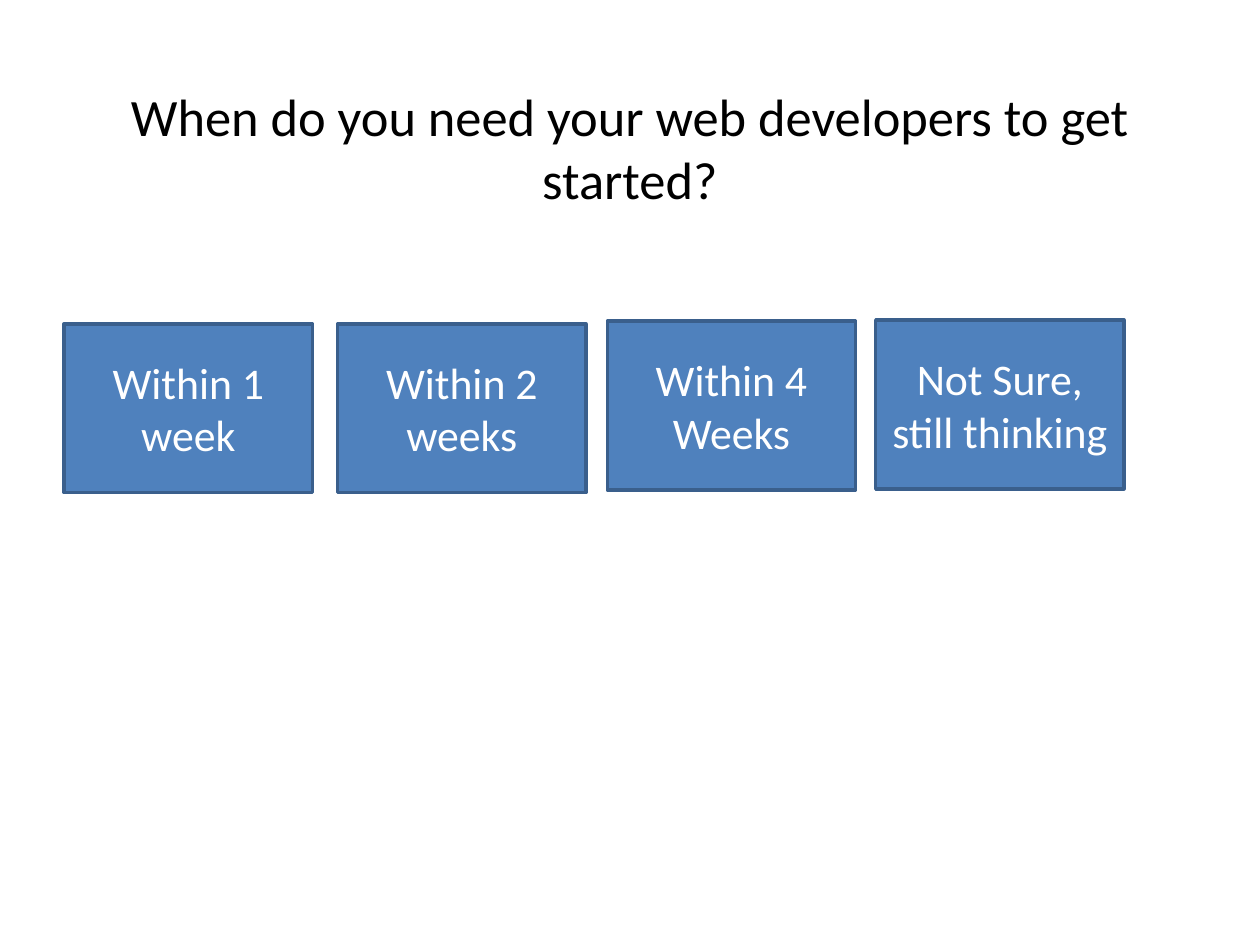
"""Build a question slide with a row of four answer boxes."""
import pptx
import pptx.util
import pptx.dml.color
import pptx.enum.shapes
import pptx.enum.text

Inches = pptx.util.Inches
Pt = pptx.util.Pt

COLORS = {"text": "000000", "fill": "4F81BD", "line": "3A5F8C", "label": "FFFFFF"}
ANSWERS = [
    ("Within 1 week", 0.51, 2.57),
    ("Within 2 weeks", 2.68, 2.57),
    ("Within 4 Weeks", 4.82, 2.55),
    ("Not Sure, still thinking", 6.95, 2.54),
]


def color(name):
    return pptx.dml.color.RGBColor.from_string(COLORS[name])


def write(shape, text, size, ink):
    frame = shape.text_frame
    frame.text = text
    frame.word_wrap = True
    frame.vertical_anchor = pptx.enum.text.MSO_ANCHOR.MIDDLE
    line = frame.paragraphs[0]
    line.alignment = pptx.enum.text.PP_ALIGN.CENTER
    font = line.runs[0].font
    font.name = "Calibri"
    font.size = Pt(size)
    font.color.rgb = color(ink)


def add_title(slide, text):
    box = slide.shapes.add_textbox(Inches(0.75), Inches(0.36), Inches(8.5), Inches(1.61))
    write(box, text, 30, "text")


def add_answer(slide, text, left, top):
    box = slide.shapes.add_shape(
        pptx.enum.shapes.MSO_SHAPE.RECTANGLE,
        Inches(left), Inches(top), Inches(1.97), Inches(1.34))
    box.shadow.inherit = False
    box.fill.solid()
    box.fill.fore_color.rgb = color("fill")
    box.line.color.rgb = color("line")
    box.line.width = Pt(2)
    write(box, text, 25, "label")


def main():
    deck = pptx.Presentation()
    deck.slide_width = Inches(10)
    deck.slide_height = Inches(7.5)
    slide = deck.slides.add_slide(deck.slide_layouts[6])
    add_title(slide, "When do you need your web developers to get started?")
    for text, left, top in ANSWERS:
        add_answer(slide, text, left, top)
    deck.save("out.pptx")


if __name__ == "__main__":
    main()
